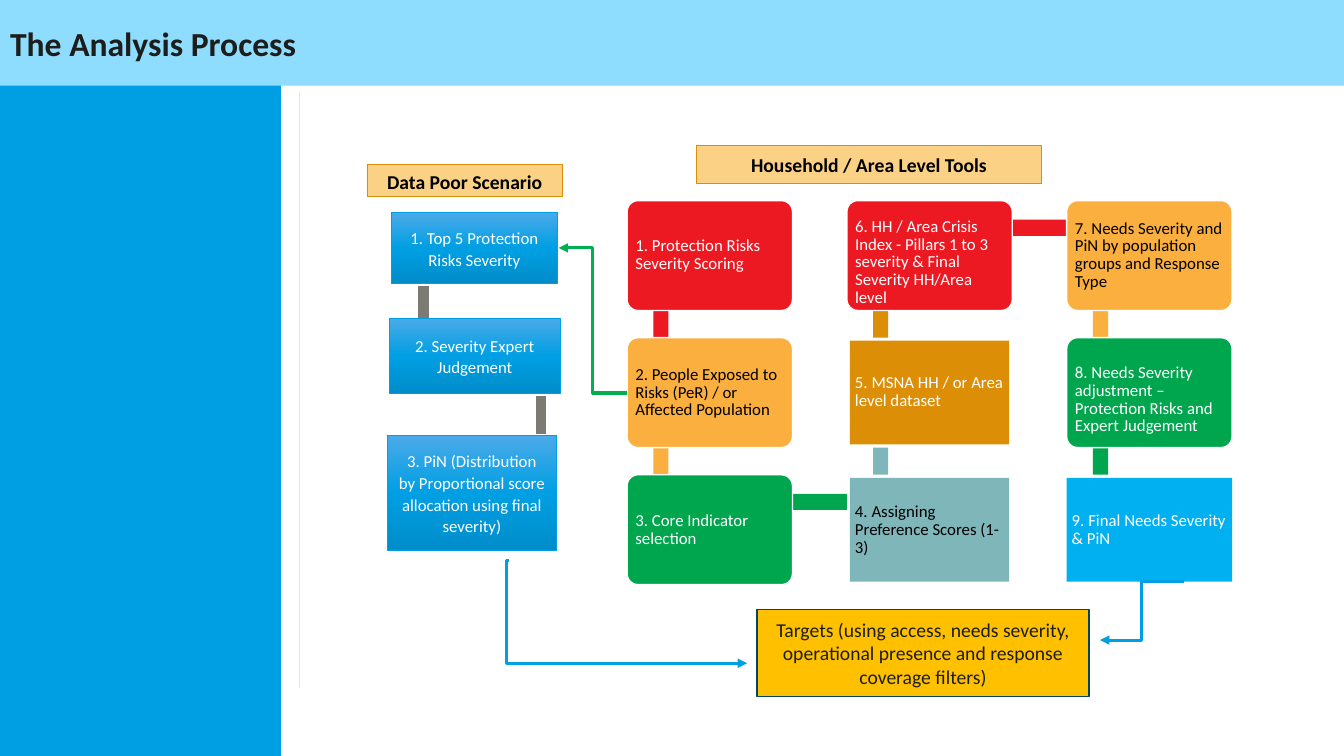
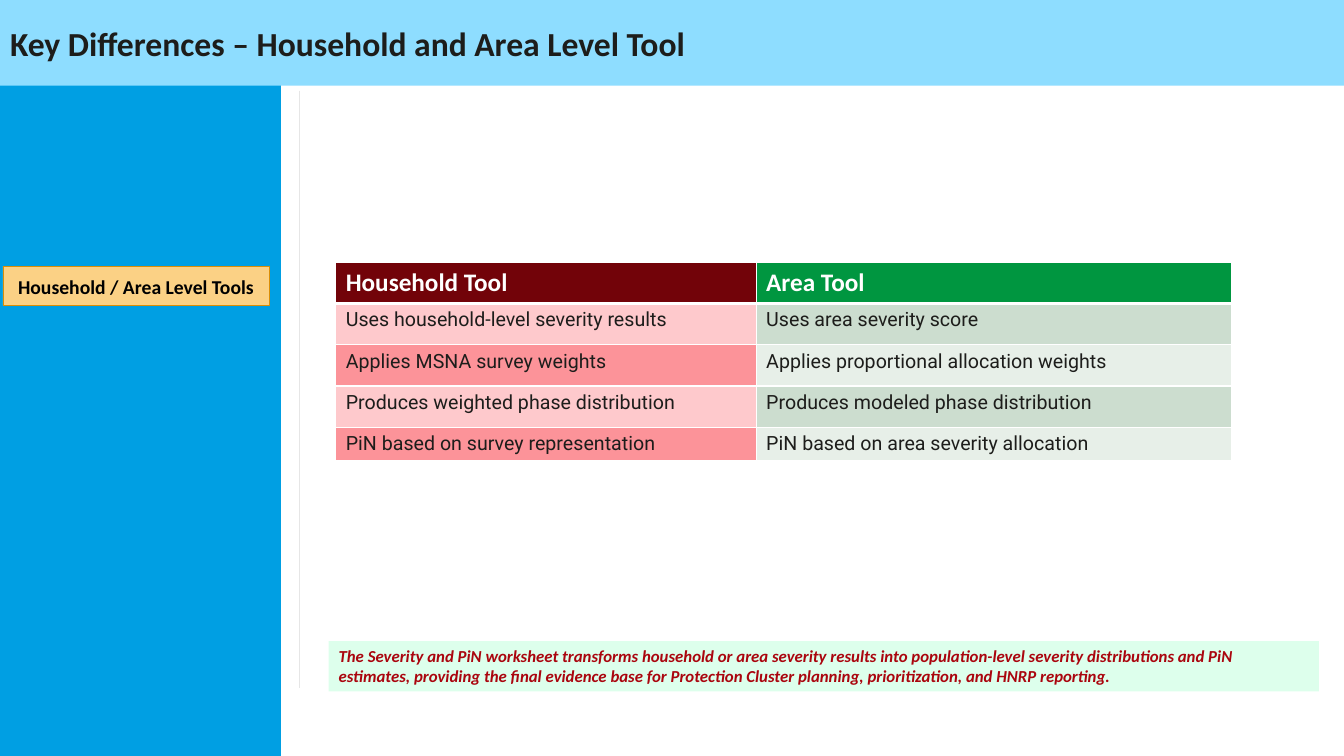
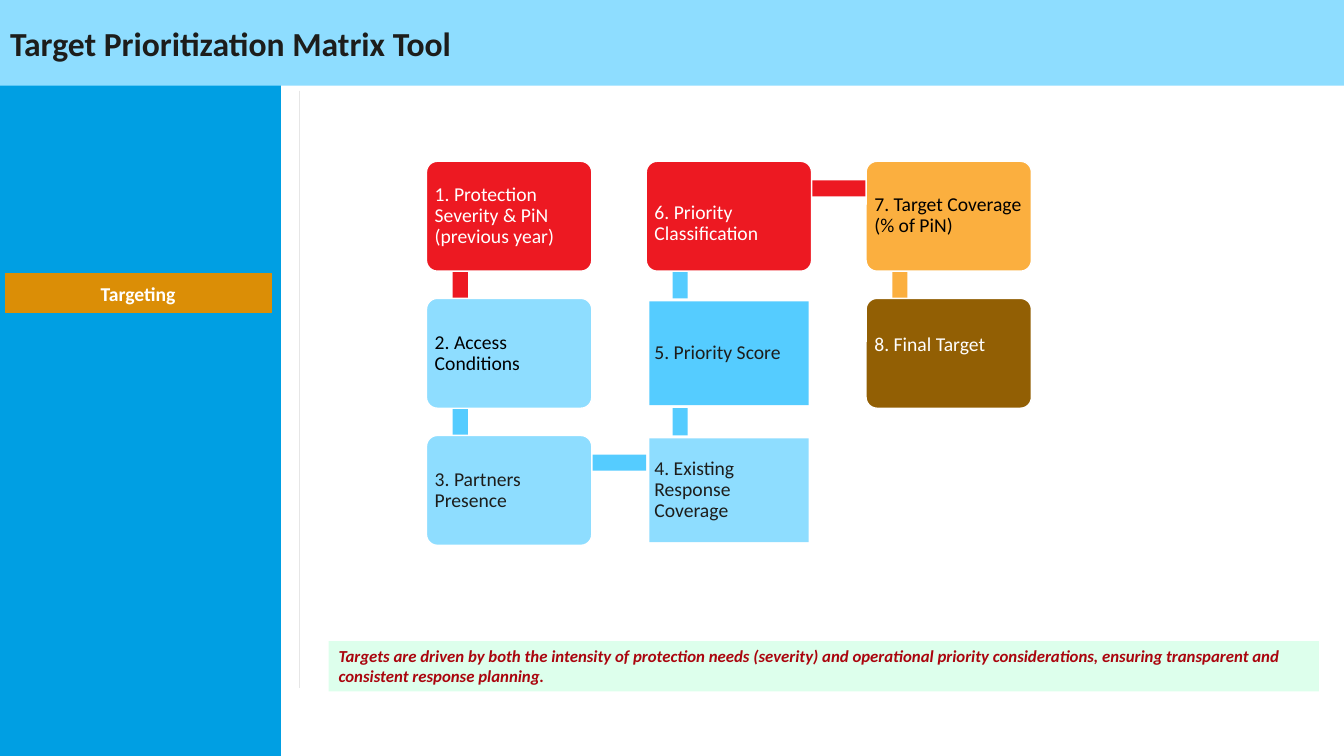
"""Build three slides on the analysis process and its tools."""
from copy import deepcopy
from dataclasses import dataclass
from itertools import pairwise
from typing import Any

from pptx import Presentation
from pptx.dml.color import RGBColor as Rgb
from pptx.enum.shapes import MSO_CONNECTOR as Wire, MSO_SHAPE as Form
from pptx.enum.text import MSO_ANCHOR as Anchor, MSO_AUTO_SIZE as Fit, PP_ALIGN as Align
from pptx.oxml.ns import qn
from pptx.oxml.xmlchemy import OxmlElement as make
from pptx.util import Inches, Pt

HUES = {
    "white": "FFFFFF", "black": "000000", "ink": "1D1D1B", "rule": "E6E6E6",
    "blue": "009FE3", "sky": "8EDDFF", "bright": "55CCFF", "final": "00B0F0",
    "light": "4BAAE9", "deep": "008DCA", "navy": "004663", "gray": "7B7B73",
    "red": "ED1922", "amber": "FBAF3F", "green": "00A64E", "teal": "7FB6BA",
    "ochre": "DB8E06", "sand": "FBD185", "gold": "FFC000", "brown": "925F04",
    "arrow": "00B050", "mint": "DDFFEC", "wine": "AA050E",
    "maroon": "720309", "forest": "009640", "pink": "FEC9CC", "rose": "FC9399",
    "sage": "CCDDCF", "mist": "E7EFE8",
}
WIDE, HIGH = 1.64, 1.09
STEP_X, STEP_Y, ROWS = 2.18, 1.36, 3
EDGE = 0.03
Box = tuple[float, float, float, float]
Spot = tuple[float, float]


@dataclass
class Card:
    """One step of a flow; side is the margin of a square card."""
    text: str
    fill: str
    ink: str = "white"
    side: float | None = None
    drop: float = 0
    link: str = ""


@dataclass
class Label:
    """A small heading box."""
    text: str
    box: Box
    fill: str = "sand"
    ink: str = "black"


@dataclass
class Arrow:
    """An elbow arrow; bend is where it turns, as a share of its width."""
    start: Spot
    end: Spot
    hue: str = "blue"
    bend: float = 0.5


def tint(name: str) -> Rgb:
    """Return a named colour."""
    return Rgb.from_string(HUES[name])


def style(item: Any, looks: dict[str, Any]) -> None:
    """Set each given attribute."""
    for key, value in looks.items():
        setattr(item, key, value)


def write(frame: Any, text: str, size: float, ink: str, para: dict[str, Any] | None = None,
          name: str = "Calibri", **looks: Any) -> None:
    """Fill a text frame with one paragraph."""
    frame.text = text
    line = frame.paragraphs[0]
    style(line, para or {})
    style(line.runs[0].font, {"size": Pt(size), "name": name, **looks})
    line.runs[0].font.color.rgb = tint(ink)


def draw(slide: Any, box: Box, fill: str, form: Any = Form.RECTANGLE,
         edge: str = "", width: float = 1) -> Any:
    """Add a flat shape."""
    shape = slide.shapes.add_shape(form, *map(Inches, box))
    shape.shadow.inherit = False
    shape.fill.solid()
    shape.fill.fore_color.rgb = tint(fill)
    if edge:
        shape.line.color.rgb = tint(edge)
        shape.line.width = Pt(width)
    else:
        shape.line.fill.background()
    style(shape.text_frame, {"word_wrap": True, "vertical_anchor": Anchor.MIDDLE})
    return shape


def join(slide: Any, kind: Any, start: Spot, end: Spot, hue: str, width: float) -> Any:
    """Add a connector without shadow."""
    wire = slide.shapes.add_connector(kind, *map(Inches, (*start, *end)))
    wire.line.color.rgb = tint(hue)
    wire.line.width = Pt(width)
    wire.element.spPr.append(make("a:effectLst"))
    return wire


def point(slide: Any, arrow: Arrow) -> None:
    """Draw an elbow arrow."""
    wire = join(slide, Wire.ELBOW, arrow.start, arrow.end, arrow.hue, 2.25)
    props = wire.element.spPr
    guide = make("a:gd")
    guide.set("name", "adj1")
    guide.set("fmla", f"val {round(arrow.bend * 100000)}")
    props.find(qn("a:prstGeom")).get_or_add_avLst().append(guide)
    head = make("a:tailEnd")
    head.set("type", "triangle")
    props.find(qn("a:ln")).append(head)


def tag(slide: Any, label: Label) -> None:
    """Draw a heading box."""
    shape = draw(slide, label.box, label.fill, edge="ochre", width=0.5)
    para = {"alignment": Align.CENTER, "line_spacing": 1.07, "space_after": Pt(8)}
    write(shape.text_frame, label.text, 14, label.ink, para, bold=True)


def note(slide: Any, text: str) -> None:
    """Draw the closing remark."""
    frame = draw(slide, (3.26, 6.36, 9.82, 0.5), "mint").text_frame
    frame.vertical_anchor = Anchor.TOP
    write(frame, text, 12, "wine", {"alignment": Align.LEFT}, bold=True, italic=True)


def place(index: int) -> tuple[int, int]:
    """Return column and row on a path that runs down, then up."""
    col, row = divmod(index, ROWS)
    return col, ROWS - 1 - row if col % 2 else row


def flow(slide: Any, left: float, top: float, cards: list[Card], size: float) -> None:
    """Draw linked cards along the path."""
    spots = [place(index) for index in range(len(cards))]
    for card, (here, there) in zip(cards, pairwise(spots)):
        x = left + here[0] * STEP_X
        y = top + min(here[1], there[1]) * STEP_Y
        if here[0] == there[0]:
            box = (x + 0.26, y + HIGH, 0.15, STEP_Y - HIGH)
        else:
            box = (x + WIDE, y + 0.19, STEP_X - WIDE, 0.16)
        draw(slide, box, card.link or card.fill)
    para = {"alignment": Align.LEFT, "line_spacing": 0.89, "space_after": Pt(8)}
    for card, (col, row) in zip(cards, spots):
        x, y = left + col * STEP_X, top + row * STEP_Y
        if card.side is None:
            shape = draw(slide, (x, y, WIDE, HIGH), card.fill, Form.ROUNDED_RECTANGLE, "white")
            shape.adjustments[0] = 0.1
        else:
            box = (x + card.side, y + EDGE, WIDE - 2 * card.side, HIGH - 2 * EDGE)
            shape = draw(slide, box, card.fill)
        style(shape.text_frame, {
            "margin_left": Inches(0.05), "margin_right": Inches(0.05),
            "margin_top": Inches(max(0, 2 * card.drop)),
            "margin_bottom": Inches(max(0, -2 * card.drop)),
        })
        write(shape.text_frame, card.text, size, card.ink, para)


def blend(shape: Any) -> None:
    """Give a shape the three-stop blue gradient."""
    shape.fill.gradient()
    shape.fill.gradient_angle = 270
    stops = shape.element.spPr.find(".//" + qn("a:gsLst"))
    stops.insert(1, deepcopy(stops[0]))
    for index, (stop, hue) in enumerate(zip(shape.fill.gradient_stops, ("light", "blue", "deep"))):
        stop.position = index / 2
        stop.color.rgb = tint(hue)


def border(cell: Any, base: float) -> None:
    """Draw white lines round a table cell."""
    for side, width in (("L", 1), ("R", 1), ("T", 1), ("B", base)):
        line = make(f"a:ln{side}")
        line.set("w", str(Pt(width)))
        fill, hue = make("a:solidFill"), make("a:srgbClr")
        hue.set("val", HUES["white"])
        fill.append(hue)
        line.append(fill)
        cell._tc.get_or_add_tcPr().append(line)


def grid(slide: Any, rows: list[tuple[str, str]]) -> None:
    """Draw the table that compares the tools."""
    cols, highs = (4.17, 4.72), (0.41, 0.41, 0.41, 0.41, 0.33)
    box = (3.33, 2.6, sum(cols), sum(highs))
    table = slide.shapes.add_table(len(rows), len(cols), *map(Inches, box)).table
    for col, wide in zip(table.columns, cols):
        col.width = Inches(wide)
    bands = (("maroon", "pink", "rose"), ("forest", "sage", "mist"))
    for r, (texts, high) in enumerate(zip(rows, highs)):
        table.rows[r].height = Inches(high)
        for c, text in enumerate(texts):
            cell = table.cell(r, c)
            border(cell, 1 if r else 3)
            cell.fill.solid()
            cell.fill.fore_color.rgb = tint(bands[c][2 - r % 2 if r else 0])
            if r:
                write(cell.text_frame, text, 14, "ink", name="Roboto", bold=False)
            else:
                write(cell.text_frame, text, 18, "white", bold=True)


def start(deck: Any, title: str) -> Any:
    """Add a slide with its title band."""
    slide = deck.slides.add_slide(deck.slide_layouts[5])
    head = slide.shapes.title
    style(head, {"left": 0, "top": 0, "width": deck.slide_width, "height": Inches(0.85)})
    head.fill.solid()
    head.fill.fore_color.rgb = tint("sky")
    style(head.text_frame, {"vertical_anchor": Anchor.MIDDLE, "auto_size": Fit.NONE})
    write(head.text_frame, title, 24, "ink", {"alignment": Align.LEFT}, bold=True)
    return slide


def frame(deck: Any, slide: Any) -> None:
    """Move the side panel and rule into the shared layout."""
    panel = draw(slide, (0, 0, 2.78, 7.5), "blue", edge="blue")
    rule = join(slide, Wire.STRAIGHT, (2.97, 0.9), (2.97, 6.83), "rule", 1)
    tree = deck.slide_layouts[5].shapes.element
    for spot, part in enumerate((panel, rule), 2):
        tree.insert(spot, part.element)


def process(slide: Any) -> None:
    """Draw the analysis process."""
    flow(slide, 6.22, 1.99, [
        Card("1. Protection Risks Severity Scoring", "red"),
        Card("2. People Exposed to Risks (PeR) / or Affected Population", "amber", "black"),
        Card("3. Core Indicator selection", "green"),
        Card("4. Assigning Preference Scores (1-3)", "teal", "black", EDGE),
        Card("5. MSNA HH / or Area level dataset", "ochre", side=EDGE),
        Card("6. HH / Area Crisis Index - Pillars 1 to 3 severity & Final Severity HH/Area level",
             "red", drop=0.07),
        Card("7. Needs Severity and PiN by population groups and Response Type", "amber", "black"),
        Card("8. Needs Severity adjustment – Protection Risks and Expert Judgement",
             "green", drop=0.07),
        Card("9. Final Needs Severity & PiN", "final", side=0),
    ], 12)
    para = {"alignment": Align.CENTER, "line_spacing": 1.07, "space_after": Pt(8)}
    for text, box in (
        ("1. Top 5 Protection Risks Severity", (3.88, 2.11, 1.65, 0.7)),
        ("2. Severity Expert Judgement", (3.86, 3.16, 1.7, 0.74)),
        ("3. PiN (Distribution by Proportional score allocation using final severity)",
         (3.84, 4.32, 1.68, 1.14)),
    ):
        shape = draw(slide, box, "blue", edge="blue", width=0.5)
        blend(shape)
        write(shape.text_frame, text, 12, "white", para)
    for box in ((5.11, 3.9, 0.51, 0.43), (3.98, 2.78, 0.44, 0.43)):
        draw(slide, box, "gray", Form.MATH_MINUS).rotation = 90
    tag(slide, Label("Data Poor Scenario", (3.64, 1.63, 1.94, 0.32)))
    tag(slide, Label("Household / Area Level Tools", (6.91, 1.44, 3.42, 0.38)))
    goal = draw(slide, (7.51, 6.05, 3.29, 0.86), "gold", edge="navy")
    write(goal.text_frame, "Targets (using access, needs severity, operational presence "
          "and response coverage filters)", 14, "ink", {"alignment": Align.CENTER})
    for arrow in (
        Arrow((6.22, 3.9), (5.54, 2.46), "arrow"),
        Arrow((11.74, 5.77), (10.91, 6.35)),
        Arrow((5.05, 5.56), (7.41, 6.58), bend=-0.01),
    ):
        point(slide, arrow)


def compare(slide: Any) -> None:
    """Draw the two tools side by side."""
    note(slide, "The Severity and PiN worksheet transforms household or area severity results "
         "into population-level severity distributions and PiN estimates, providing the final "
         "evidence base for Protection Cluster planning, prioritization, and HNRP reporting.")
    tag(slide, Label("Household / Area Level Tools", (0.03, 2.64, 2.64, 0.39)))
    grid(slide, [
        ("Household Tool", "Area Tool"),
        ("Uses household-level severity results", "Uses area severity score"),
        ("Applies MSNA survey weights", "Applies proportional allocation weights"),
        ("Produces weighted phase distribution", "Produces modeled phase distribution"),
        ("PiN based on survey representation", "PiN based on area severity allocation"),
    ])


def target(slide: Any) -> None:
    """Draw the targeting steps."""
    tag(slide, Label("Targeting", (0.05, 2.71, 2.64, 0.39), "ochre", "white"))
    flow(slide, 4.23, 1.6, [
        Card("1. Protection Severity & PiN (previous year)", "red"),
        Card("2. Access Conditions", "sky", "black", link="bright"),
        Card("3. Partners Presence", "sky", "ink", link="bright"),
        Card("4. Existing Response Coverage", "sky", "ink", EDGE, link="bright"),
        Card("5. Priority Score", "bright", "ink", EDGE),
        Card("6. Priority Classification", "red", drop=0.07),
        Card("7. Target Coverage (% of PiN)", "amber", "black"),
        Card("8. Final Target", "brown", drop=-0.08),
    ], 14)
    note(slide, "Targets are driven by both the intensity of protection needs (severity) and "
         "operational priority considerations, ensuring transparent and consistent response "
         "planning.")


def main() -> None:
    """Build and save the deck."""
    deck = Presentation()
    deck.slide_width, deck.slide_height = Inches(13.33), Inches(7.5)
    first = start(deck, "The Analysis Process")
    frame(deck, first)
    process(first)
    compare(start(deck, "Key Differences – Household and Area Level Tool"))
    target(start(deck, "Target Prioritization Matrix Tool"))
    deck.save("out.pptx")


if __name__ == "__main__":
    main()
